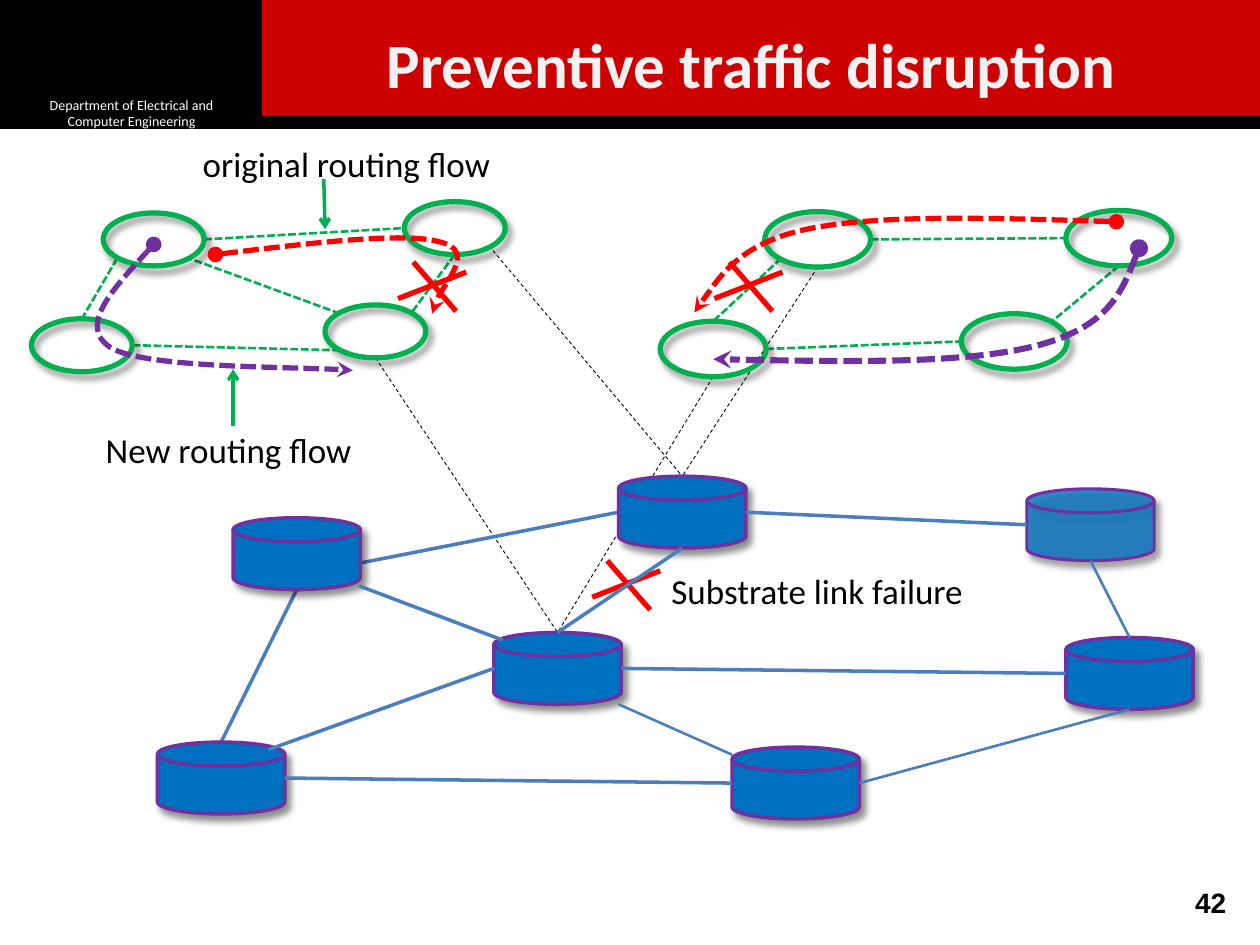
import pptx
import pptx.dml.color
import pptx.enum.dml
import pptx.enum.shapes
import pptx.enum.text
import pptx.oxml.ns
import pptx.util
from lxml import etree

Inches = pptx.util.Inches
qn = pptx.oxml.ns.qn
SHAPE = pptx.enum.shapes.MSO_SHAPE
ALIGN = pptx.enum.text.PP_ALIGN
ANCHOR = pptx.enum.text.MSO_ANCHOR
DASHED = pptx.enum.dml.MSO_LINE.DASH
DOTTED = pptx.enum.dml.MSO_LINE.SQUARE_DOT

COLORS = {
    "black": "000000", "white": "FFFFFF", "banner": "CC0000", "title": "F2F2F2",
    "green": "00B050", "red": "FF0000", "purple": "7030A0", "disk": "0070C0", "link": "4B7EBC",
}
RING_SIZES = {"left": (0.8, 0.42), "right": (0.84, 0.44)}
RINGS = {
    "A": (3.21, 1.6, "left"), "B": (0.82, 1.69, "left"),
    "C": (2.58, 2.42, "left"), "D": (0.25, 2.53, "left"),
    "E": (7.63, 2.49, "right"), "F": (6.07, 1.68, "right"),
    "G": (5.24, 2.55, "right"), "H": (8.46, 1.67, "right"),
}
DISK_SIZE = (1.01, 0.57)
DISKS = {
    "north": (4.91, 3.78), "northeast": (8.15, 3.88), "east": (8.46, 5.06),
    "northwest": (1.85, 4.11), "south": (5.81, 5.93), "center": (3.92, 5.02),
    "southwest": (1.25, 5.89),
}
TRANSLUCENT_DISK, TRANSLUCENT_ALPHA = "northeast", 78000
MAPPINGS = [
    ((3.88, 1.95), ("north", "top")), (("C", "bottom"), ("center", "top")),
    (("F", "bottom"), ("north", "top")), (("G", "bottom"), ("center", "top")),
]
VIRTUAL_LINKS = [
    ((0.93, 2.05), ("D", "top")), (("B", "right"), ("A", "left")),
    (("A", "bottom"), (3.26, 2.49)), ((2.7, 2.78), ("D", "right")),
    ((2.7, 2.49), (1.5, 2.05)), (("F", "right"), ("H", "left")),
    (("G", "right"), ("E", "left")), ((6.2, 2.05), ("G", "top")),
    (("H", "bottom"), (8.35, 2.55)),
]
BACK_LINKS = [
    ((2.75, 4.49), ("north", "left"), 2),
    (("northwest", "bottom"), ("southwest", "top"), 2),
]
FRONT_LINKS = [
    (("north", "bottom"), ("center", "top"), 2),
    (("northeast", "left"), ("north", "right"), 2),
    (("center", "left"), (2.13, 5.95), 2),
    (("south", "left"), ("southwest", "right"), 2),
    ((4.91, 5.59), (5.81, 5.99), 1.5),
    (("northeast", "bottom"), ("east", "top"), 1.5),
    (("east", "bottom"), ("south", "right"), 1.5),
    (("east", "left"), ("center", "right"), 2),
    ((2.85, 4.65), (3.99, 5.08), 2),
]
CROSSES = [(3.16, 2.08), (5.67, 2.08), (4.7, 4.45)]
CROSS_STROKES = [((0.12, 0), (0.46, 0.39)), ((0, 0.29), (0.54, 0.08))]
FLOWS = [
    ("red", 3, [(1.71, 2.02), (2.46, 1.93), (3.21, 1.84), (3.49, 1.92),
                (3.78, 1.99), (3.43, 2.35), (3.43, 2.49)]),
    ("purple", 3, [(1.22, 1.94), (0.92, 2.27), (0.61, 2.59), (0.88, 2.76),
                   (1.14, 2.92), (2.48, 2.91), (2.8, 2.94)]),
    ("red", 3, [(8.86, 1.76), (7.91, 1.73), (6.96, 1.7), (6.4, 1.82),
                (5.84, 1.94), (5.51, 2.48), (5.51, 2.48)]),
    ("purple", 3.5, [(9.04, 1.97), (8.92, 2.28), (8.8, 2.59), (8.24, 2.74),
                     (7.67, 2.89), (6.67, 2.87), (5.66, 2.85)]),
]
LABELS = [
    ("original routing flow", (1.51, 1.08, 2.99, 0.44)),
    ("New routing flow", (0.74, 3.35, 2.32, 0.44)),
    ("Substrate link failure", (5.23, 4.47, 4.52, 0.44)),
]
POINTERS = [((1.85, 3.38), (1.85, 2.93)), ((2.57, 1.42), (2.58, 1.82))]


def rgb(name):
    return pptx.dml.color.RGBColor.from_string(COLORS[name])


def write(box, text, size=20, color="black", font="Calibri", bold=False,
          align=ALIGN.LEFT, anchor=ANCHOR.TOP):
    frame = box.text_frame
    frame.word_wrap = True
    frame.vertical_anchor = anchor
    para = frame.paragraphs[0]
    para.alignment = align
    span = para.add_run()
    span.text = text
    span.font.size, span.font.name, span.font.bold = pptx.util.Pt(size), font, bold
    span.font.color.rgb = rgb(color)


def stroke(item, color, width, dash=None, head=None, tail=None):
    item.line.color.rgb = rgb(color)
    item.line.width = pptx.util.Pt(width)
    if dash:
        item.line.dash_style = dash
    outline = item.element.spPr.find(qn("a:ln"))
    for tag, kind in (("a:headEnd", head), ("a:tailEnd", tail)):
        if kind:
            etree.SubElement(outline, qn(tag), type=kind)


def add_shape(page, kind, place, fill=None, color=None, width=1):
    shape = page.shapes.add_shape(kind, *map(Inches, place))
    shape.shadow.inherit = False
    if fill:
        shape.fill.solid()
        shape.fill.fore_color.rgb = rgb(fill)
    else:
        shape.fill.background()
    if color:
        stroke(shape, color, width)
    else:
        shape.line.fill.background()
    return shape


def set_alpha(color_element, alpha):
    etree.SubElement(color_element, qn("a:alpha"), val=str(alpha))


def cast_shadow(shape):
    effects = shape.element.spPr.find(qn("a:effectLst"))
    shadow = etree.SubElement(effects, qn("a:outerShdw"), blurRad="50800", dist="50800",
                              dir="3180000", algn="tl", rotWithShape="0")
    set_alpha(etree.SubElement(shadow, qn("a:srgbClr"), val=COLORS["black"]), 43000)


def add_line(page, start, end, color, width, **style):
    line = page.shapes.add_connector(
        pptx.enum.shapes.MSO_CONNECTOR.STRAIGHT, *map(Inches, (*start, *end)))
    stroke(line, color, width, **style)
    etree.SubElement(line.element.spPr, qn("a:effectLst"))


def add_flow(page, color, width, points):
    spots = [(Inches(x), Inches(y)) for x, y in points]
    builder = page.shapes.build_freeform(*spots[0], scale=1.0)
    builder.add_line_segments(spots[3::3], close=False)
    flow = builder.convert_to_shape()
    flow.shadow.inherit = False
    flow.fill.background()
    stroke(flow, color, width, dash=DOTTED, head="oval", tail="stealth")
    segments = list(flow.element.iter(qn("a:lnTo")))
    for index, segment in enumerate(segments):
        curve = etree.Element(qn("a:cubicBezTo"))
        for x, y in spots[3 * index + 1:3 * index + 4]:
            etree.SubElement(curve, qn("a:pt"), x=str(x - flow.left), y=str(y - flow.top))
        segment.getparent().replace(segment, curve)


def locate(end):
    name, side = end
    if not isinstance(name, str):
        return end
    if name in DISKS:
        (left, top), (width, height) = DISKS[name], DISK_SIZE
    else:
        left, top, network = RINGS[name]
        width, height = RING_SIZES[network]
    across, down = {"top": (0.5, 0), "left": (0, 0.5),
                    "bottom": (0.5, 1), "right": (1, 0.5)}[side]
    return left + width * across, top + height * down


def add_header(page):
    add_shape(page, SHAPE.RECTANGLE, (0, 0.01, 10, 1), "black", "black", 2)
    department = add_shape(page, SHAPE.RECTANGLE, (0.17, 0.77, 1.75, 0.25), "black")
    write(department, "Department of Electrical and Computer Engineering", size=8,
          color="white", align=ALIGN.CENTER, anchor=ANCHOR.MIDDLE)
    add_shape(page, SHAPE.RECTANGLE, (2.08, 0, 7.92, 0.92), "banner")
    title = page.shapes.title
    title.left, title.top, title.width, title.height = map(Inches, (1.92, 0.17, 8.08, 0.67))
    write(title, "Preventive traffic disruption", size=36, color="title", bold=True,
          align=ALIGN.CENTER, anchor=ANCHOR.MIDDLE)
    title.element.getparent().append(title.element)
    number = page.shapes.add_textbox(*map(Inches, (8.85, 6.98, 0.98, 0.31)))
    write(number, "42", size=16, font="Arial", bold=True, align=ALIGN.RIGHT)


def add_virtual_networks(page):
    for start, end in MAPPINGS:
        add_line(page, locate(start), locate(end), "black", 0.5, dash=DASHED)
    for start, end in VIRTUAL_LINKS:
        add_line(page, locate(start), locate(end), "green", 1.5, dash=DOTTED)
    for left, top, network in RINGS.values():
        cast_shadow(add_shape(page, SHAPE.OVAL, (left, top, *RING_SIZES[network]),
                              color="green", width=3))
    for left, top in CROSSES:
        for ends in CROSS_STROKES:
            start, end = [(left + x, top + y) for x, y in ends]
            add_line(page, start, end, "red", 3)
    for flow in FLOWS:
        add_flow(page, *flow)


def add_substrate(page):
    for start, end, width in BACK_LINKS:
        add_line(page, locate(start), locate(end), "link", width)
    for name, corner in DISKS.items():
        disk = add_shape(page, SHAPE.FLOWCHART_MAGNETIC_DISK, (*corner, *DISK_SIZE),
                         "disk", "purple", 2)
        cast_shadow(disk)
        if name == TRANSLUCENT_DISK:
            disk.line.width = pptx.util.Pt(1.75)
            set_alpha(disk.element.spPr.find(qn("a:solidFill"))[0], TRANSLUCENT_ALPHA)
    for start, end, width in FRONT_LINKS:
        add_line(page, locate(start), locate(end), "link", width)


def main():
    """Build the slide on rerouting virtual networks around a failed link."""
    deck = pptx.Presentation()
    deck.slide_width, deck.slide_height = Inches(10), Inches(7.5)
    page = deck.slides.add_slide(deck.slide_layouts[5])
    add_header(page)
    add_virtual_networks(page)
    add_substrate(page)
    for text, place in LABELS:
        write(page.shapes.add_textbox(*map(Inches, place)), text)
    for start, end in POINTERS:
        add_line(page, start, end, "green", 2, tail="arrow")
    deck.save("out.pptx")


if __name__ == "__main__":
    main()
